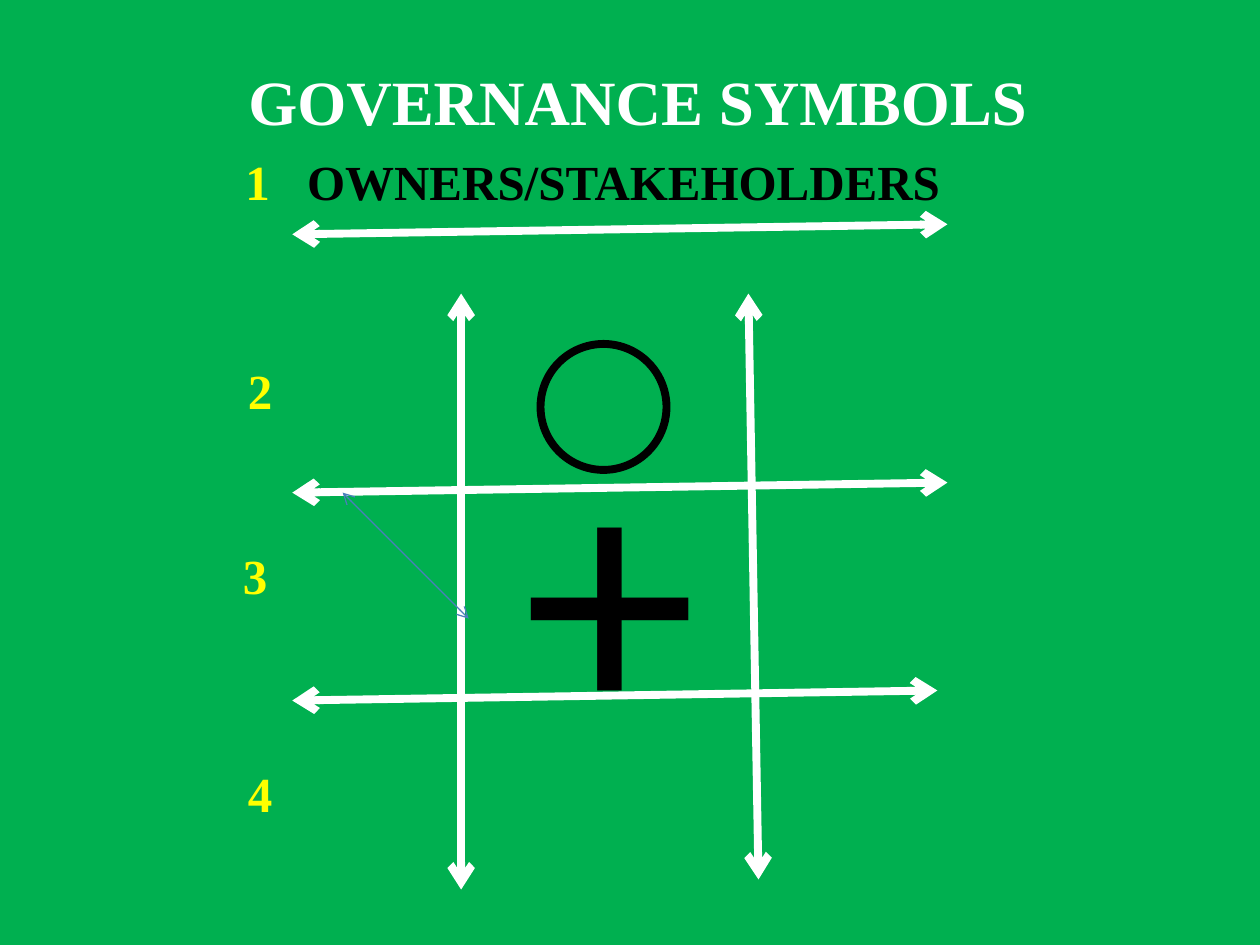
"""Build the governance symbols slide: a grid of arrows with numbered rows."""
from lxml import etree
from pptx import Presentation
from pptx.dml.color import RGBColor
from pptx.enum import shapes, text
from pptx.oxml.ns import qn
from pptx.util import Inches, Pt

COLORS = {"green": "00B050", "white": "FFFFFF", "yellow": "FFFF00",
          "black": "000000", "blue": "4B7EBC"}
SERIF, SANS = "Times New Roman", "Calibri"
TITLE = {"size": Pt(36), "name": SERIF, "bold": True}
LABEL = {"size": Pt(28), "name": SERIF, "bold": True}
SYMBOL = {"size": Pt(199), "name": SANS, "bold": False}

HEADING = ((0.75, 0.17, 8.5, 1.25), [(" GOVERNANCE SYMBOLS", "white")], TITLE)
CROSS = ((4.06, 2.9, 1.59, 3.45), [("+", "black")], SYMBOL)
OWNERS = ((1.85, 1.15, 6, 0.57),
          [("1\t", "yellow"), ("OWNERS/STAKEHOLDERS", "black")], LABEL)
ROW_NUMBERS = [("2", 1.87, 2.81), ("3", 1.83, 4.28), ("4", 1.87, 6.01)]
OWNERS_TAB = 0.49
CIRCLE = (4.29, 2.73, 1, 1)

COLUMN_LINES = [(3.66, 2.33, 3.66, 7.06), (5.94, 2.33, 6.02, 6.98)]
ROW_LINES = [(1.86, 7.52), (3.91, 7.52), (5.56, 7.44)]
ROW_LEFT, ROW_RISE = 2.32, 0.08
DIAGONAL = (2.72, 3.91, 3.72, 4.91)


def color(name):
    return RGBColor.from_string(COLORS[name])


def inches(values):
    return [Inches(value) for value in values]


def add_text(slide, box, runs, font_format, wrap=False):
    frame = slide.shapes.add_textbox(*inches(box)).text_frame
    frame.word_wrap = wrap
    frame.auto_size = (text.MSO_AUTO_SIZE.NONE if wrap
                       else text.MSO_AUTO_SIZE.SHAPE_TO_FIT_TEXT)
    paragraph = frame.paragraphs[0]
    for words, color_name in runs:
        run = paragraph.add_run()
        run.text = words
        run.font.color.rgb = color(color_name)
        for attribute, value in font_format.items():
            setattr(run.font, attribute, value)
    return frame


def add_arrow(slide, ends, color_name="white", width=4.5):
    connector = slide.shapes.add_connector(
        shapes.MSO_CONNECTOR.STRAIGHT, *inches(ends))
    connector.line.color.rgb = color(color_name)
    connector.line.width = Pt(width)
    line = connector.line._get_or_add_ln()
    for end in ("a:headEnd", "a:tailEnd"):
        etree.SubElement(line, qn(end), type="arrow")
    etree.SubElement(connector._element.spPr, qn("a:effectLst"))


def add_circle(slide):
    circle = slide.shapes.add_shape(
        shapes.MSO_SHAPE.OVAL, *inches(CIRCLE))
    circle.shadow.inherit = False
    circle.fill.solid()
    circle.fill.fore_color.rgb = color("green")
    circle.line.color.rgb = color("black")
    circle.line.width = Pt(4.5)


def main():
    presentation = Presentation()
    presentation.slide_width, presentation.slide_height = inches((10, 7.5))
    slide = presentation.slides.add_slide(presentation.slide_layouts[6])
    slide.background.fill.solid()
    slide.background.fill.fore_color.rgb = color("green")

    heading = add_text(slide, *HEADING, wrap=True)
    heading.vertical_anchor = text.MSO_ANCHOR.MIDDLE
    heading.paragraphs[0].alignment = text.PP_ALIGN.CENTER
    add_circle(slide)
    row_ends = [(ROW_LEFT, top, right, top - ROW_RISE)
                for top, right in ROW_LINES]
    for ends in COLUMN_LINES + row_ends:
        add_arrow(slide, ends)
    add_text(slide, *CROSS)

    owners = add_text(slide, *OWNERS)
    properties = owners.paragraphs[0]._p.get_or_add_pPr()
    tabs = etree.SubElement(properties, qn("a:tabLst"))
    etree.SubElement(tabs, qn("a:tab"), pos=str(Inches(OWNERS_TAB)), algn="l")
    for number, left, top in ROW_NUMBERS:
        add_text(slide, (left, top, 0.4, 0.57), [(number, "yellow")], LABEL)
    add_arrow(slide, DIAGONAL, "blue", 0.75)
    presentation.save("out.pptx")


if __name__ == "__main__":
    main()
